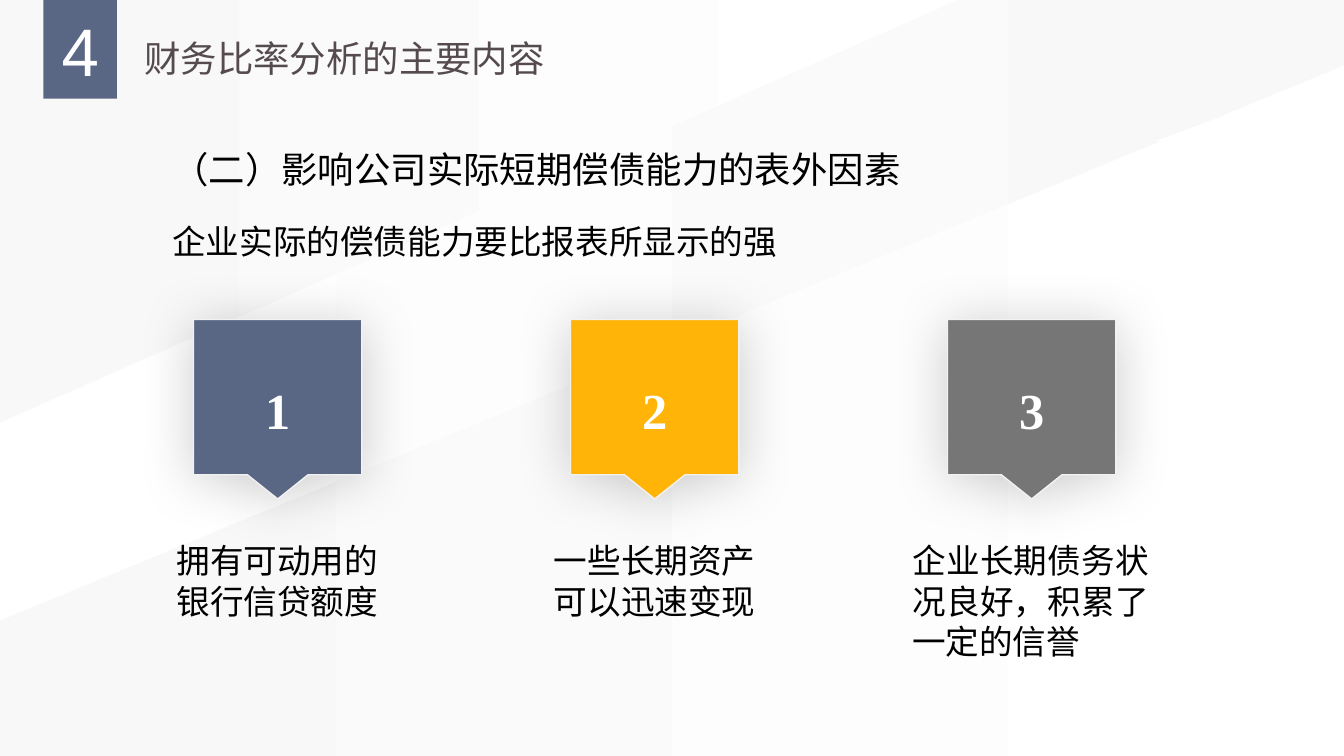
from lxml import etree
from pptx import Presentation, util as u
from pptx.dml.color import RGBColor
from pptx.enum import shapes, text
from pptx.oxml import ns

COLOURS = {
    "white": "FFFFFF", "mist": "F8F8F8", "edge": "F2F2F2", "black": "000000",
    "slate": "596784", "amber": "FFB407", "grey": "767676", "title": "554B4F",
}
SANS, LATIN, SERIF = "Noto Sans CJK SC", "Arial", "Times New Roman"
LEFT, CENTRE, JUSTIFY = text.PP_ALIGN.LEFT, text.PP_ALIGN.CENTER, text.PP_ALIGN.JUSTIFY


class Deck:
    """Draws styled elements on one slide, placed in percent of its width and height."""

    def __init__(self):
        self.prs = Presentation()
        self.prs.slide_width, self.prs.slide_height = u.Inches(13.333), u.Inches(7.5)
        self.slide = self.prs.slides.add_slide(self.prs.slide_layouts[5])

    def x(self, share):
        return round(self.prs.slide_width * share / 100)

    def y(self, share):
        return round(self.prs.slide_height * share / 100)

    def box(self, left, top, width, height):
        return self.x(left), self.y(top), self.x(width), self.y(height)

    def colour(self, name):
        return RGBColor.from_string(COLOURS[name])

    def paint(self, shape, *names):
        shape.shadow.inherit = False
        shape.line.fill.background()
        if len(names) == 1:
            shape.fill.solid()
            shape.fill.fore_color.rgb = self.colour(names[0])
        else:
            shape.fill.gradient()
            shape.fill.gradient_angle = 180
            for stop, name, position in zip(shape.fill.gradient_stops, names, (0, 1)):
                stop.color.rgb, stop.position = self.colour(name), position
        return shape

    def rect(self, place, *names):
        panel = self.slide.shapes.add_shape(shapes.MSO_SHAPE.RECTANGLE, *self.box(*place))
        return self.paint(panel, *names)

    def polygon(self, points, *names):
        corners = [(self.x(px), self.y(py)) for px, py in points]
        builder = self.slide.shapes.build_freeform(*corners[0], scale=1.0)
        builder.add_line_segments(corners[1:], close=True)
        return self.paint(builder.convert_to_shape(), *names)

    def set_text(self, shape, words, size, face=SANS, colour="black", align=LEFT, bold=False):
        paragraph = shape.text_frame.paragraphs[0]
        paragraph.text, paragraph.alignment = words, align
        font = paragraph.font
        font.size, font.bold, font.name = u.Pt(size), bold, face
        font.color.rgb = self.colour(colour)
        etree.SubElement(font._rPr, ns.qn("a:ea"), typeface=SANS)
        return paragraph

    def label(self, place, words, size, indent=0.0, margin=None, **style):
        area = self.slide.shapes.add_textbox(*self.box(*place))
        frame = area.text_frame
        frame.word_wrap = True
        frame.auto_size = text.MSO_AUTO_SIZE.SHAPE_TO_FIT_TEXT
        if margin is not None:
            frame.margin_left = frame.margin_right = u.Inches(margin)
            frame.margin_top = frame.margin_bottom = u.Inches(margin)
        paragraph = self.set_text(area, words, size, **style)
        if indent:
            paragraph._p.get_or_add_pPr().set("indent", str(u.Inches(indent)))
        return paragraph

    def title(self, place, words):
        heading = self.slide.shapes.title
        heading._element.getparent().append(heading._element)
        heading.left, heading.top, heading.width, heading.height = self.box(*place)
        frame = heading.text_frame
        frame.word_wrap = False
        frame.auto_size = text.MSO_AUTO_SIZE.SHAPE_TO_FIT_TEXT
        frame.vertical_anchor = text.MSO_ANCHOR.TOP
        self.set_text(heading, words, 26, colour="title").line_spacing = 1.3

    def flag(self, left, top, width, body, tip, number, name):
        outline = [(0, 0), (1, 0), (1, body), (0.68, body), (0.5, tip), (0.32, body), (0, body)]
        marker = self.polygon([(left + width * px, top + py) for px, py in outline], name)
        marker.line.color.rgb = self.colour("edge")
        marker.line.width = u.Pt(1)
        effects = marker._element.spPr.find(ns.qn("a:effectLst"))
        shadow = etree.SubElement(effects, ns.qn("a:outerShdw"), blurRad=str(u.Pt(40)),
                                  dist=str(u.Pt(3)), dir="5400000", algn="t", rotWithShape="0")
        tint = etree.SubElement(shadow, ns.qn("a:srgbClr"), val=COLOURS["black"])
        etree.SubElement(tint, ns.qn("a:alpha"), val="20000")
        marker.text_frame.vertical_anchor = text.MSO_ANCHOR.MIDDLE
        self.set_text(marker, number, 36, SERIF, "white", CENTRE, True)


def main():
    deck = Deck()
    deck.rect((0, 0, 100, 100), "mist", "white")
    deck.polygon([(0, 0), (71.25, 0), (0, 55.87)], "white", "mist")
    deck.polygon([(0, 82.13), (100, 8.67), (100, 100), (0, 100)], "white", "mist")
    deck.polygon([(85.95, 18.67), (100, 9.47), (100, 18.67)], "white")

    deck.title((9.98, 2.4, 31.58, 8.27), "财务比率分析的主要内容")
    deck.rect((3.23, 0, 5.48, 13.07), "slate")
    deck.label((3.23, 1.2, 5.48, 10.8), "4", 48, margin=0,
               face=LATIN, colour="white", align=CENTRE)

    factors = [
        ("slate", "拥有可动用的银行信贷额度", 11.93, 17.4, 12.13, CENTRE),
        ("amber", "一些长期资产可以迅速变现", 40.13, 17.18, 12.13, CENTRE),
        ("grey", "企业长期债务状况良好，积累了一定的信誉", 67.13, 19.13, 17.47, JUSTIFY),
    ]
    for index, (name, caption, left, width, height, align) in enumerate(factors):
        deck.flag(14.4 + 28.05 * index, 42.27, 12.53, 20.53, 23.73, str(index + 1), name)
        deck.label((left, 70.8, width, height), caption, 24, align=align)

    section = deck.label((7.05, 18.8, 62.55, 7.2), "（二）影响公司实际短期偿债能力的表外因素",
                         26, indent=0.67, face=LATIN, align=JUSTIFY)
    section.space_after = u.Pt(6)
    deck.label((7.05, 28.53, 53.78, 6.67), "企业实际的偿债能力要比报表所显示的强", 24, indent=0.67)
    deck.prs.save("out.pptx")


if __name__ == "__main__":
    main()
